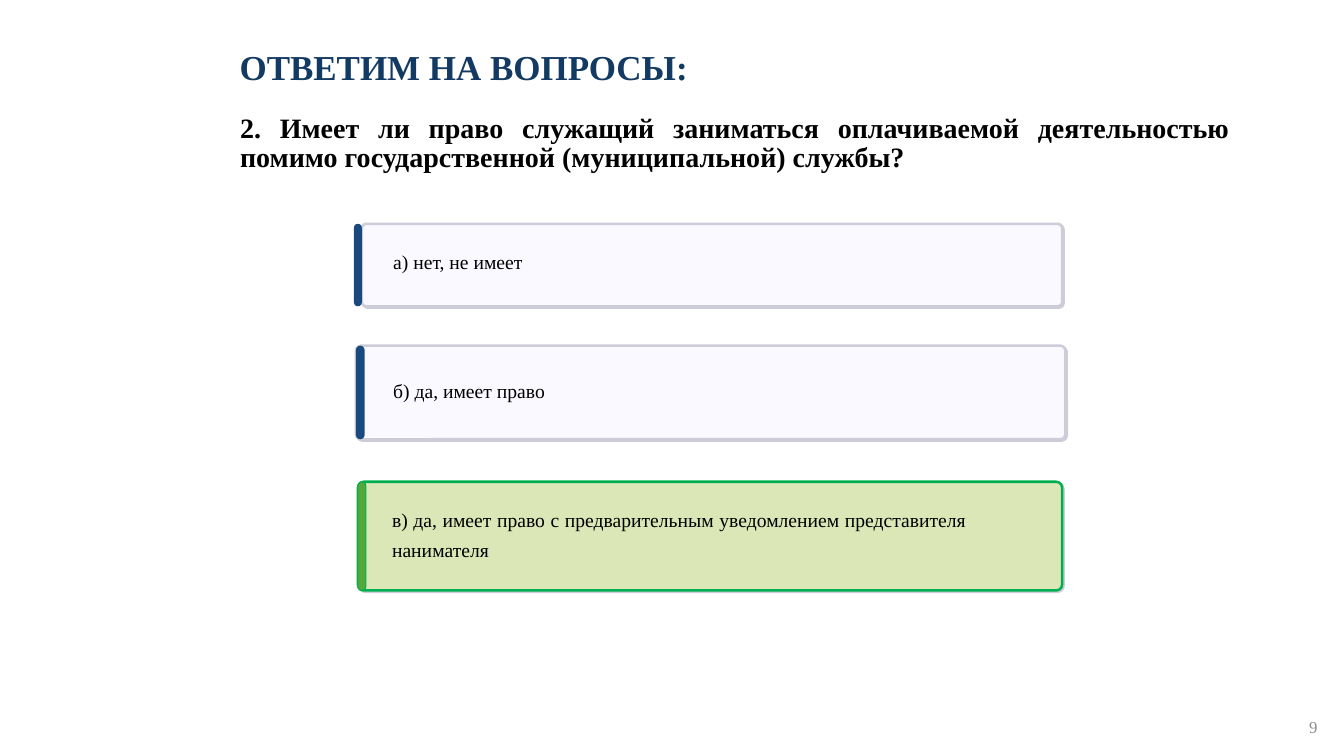
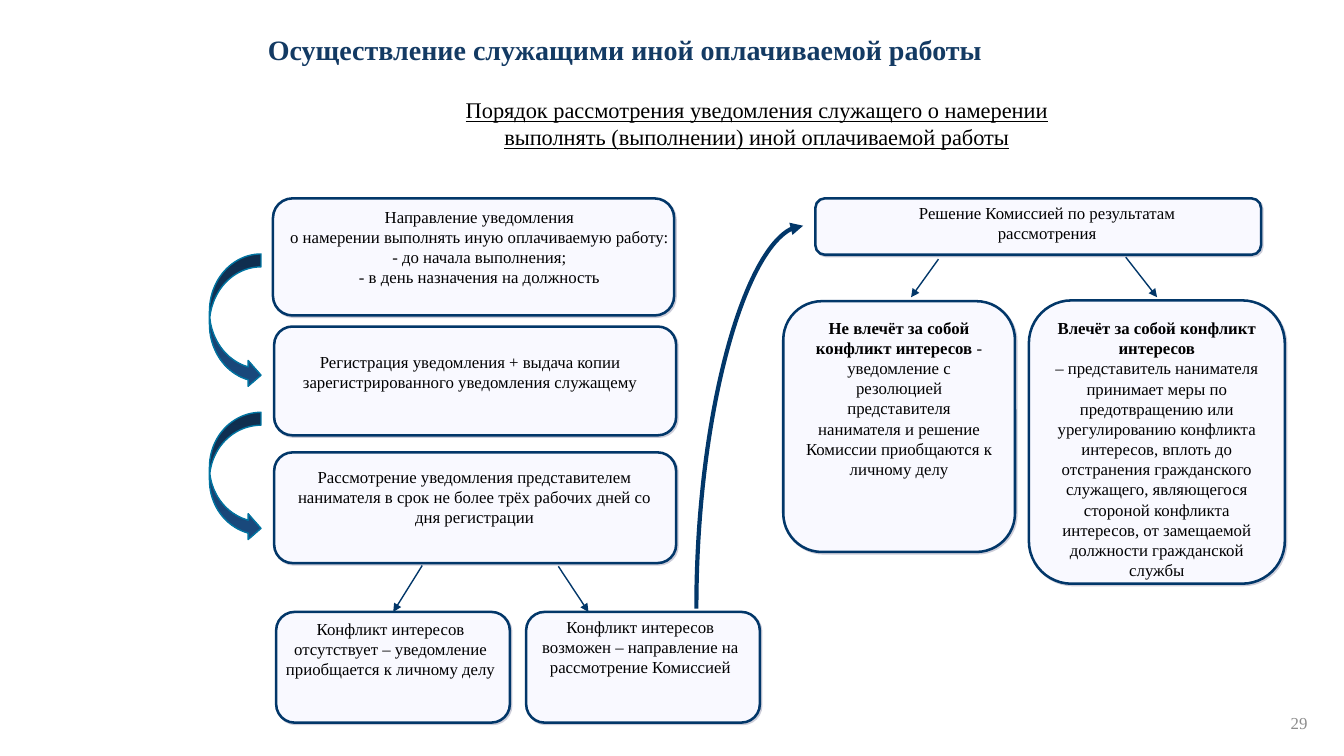
from lxml.etree import SubElement
from pptx import Presentation
from pptx.dml.color import RGBColor
from pptx.enum.shapes import MSO_CONNECTOR as Link, MSO_SHAPE as Preset
from pptx.enum.text import MSO_ANCHOR as Anchor, PP_ALIGN as Align, MSO_UNDERLINE as Underline
from pptx.oxml.ns import qn
from pptx.util import Cm, Pt

FONT = "Times New Roman"
BLACK = RGBColor(0x00, 0x00, 0x00)
TITLE_BLUE = RGBColor(0x13, 0x3A, 0x63)
BAR_BLUE = RGBColor(0x1A, 0x49, 0x7D)
FLOW_BLUE = RGBColor(0x02, 0x37, 0x69)
ARROW_EDGE = RGBColor(0x00, 0x74, 0xA1)
PALE = RGBColor(0xF9, 0xF9, 0xFF)
LILAC = RGBColor(0xCD, 0xCD, 0xD9)
PAGE_GREY = RGBColor(0x8C, 0x8C, 0x8C)
RIGHT_FILL = RGBColor(0xDB, 0xE7, 0xB6)
RIGHT_EDGE = RGBColor(0x00, 0xB0, 0x50)
RIGHT_BAR = RGBColor(0x55, 0xA8, 0x39)


def write(frame, paragraphs, size=12, color=BLACK, bold=False, underline=False,
          align=Align.CENTER, anchor=Anchor.TOP, spacing=None, inset=None):
    frame.word_wrap = True
    frame.vertical_anchor = anchor
    if inset is not None:
        frame.margin_left = frame.margin_right = inset
        frame.margin_top = frame.margin_bottom = inset
    if isinstance(paragraphs, str):
        paragraphs = [paragraphs]
    for index, content in enumerate(paragraphs):
        paragraph = frame.add_paragraph() if index else frame.paragraphs[0]
        paragraph.alignment = align
        paragraph.line_spacing = spacing
        runs = [(content, bold)] if isinstance(content, str) else content
        for text, run_bold in runs:
            run = paragraph.add_run()
            run.text = text
            run.font.name = FONT
            run.font.size = Pt(size)
            run.font.bold = run_bold
            run.font.color.rgb = color
            if underline:
                run.font.underline = Underline.SINGLE_LINE


class Deck:
    def __init__(self):
        self.show = Presentation()
        self.show.slide_width = Cm(33.87)
        self.show.slide_height = Cm(19.05)
        self.slide = None

    def open_slide(self, title, title_place, size, number, number_place):
        self.slide = self.show.slides.add_slide(self.show.slide_layouts[6])
        self.label(title_place, title, size=size, color=TITLE_BLUE, bold=True,
                   align=Align.LEFT, anchor=Anchor.MIDDLE, spacing=0.9)
        self.label((*number_place, 7.62, 1.02), number, color=PAGE_GREY,
                   align=Align.RIGHT, anchor=Anchor.MIDDLE)

    def label(self, place, paragraphs, **style):
        box = self.slide.shapes.add_textbox(*map(Cm, place))
        write(box.text_frame, paragraphs, **style)

    def shape(self, preset, place, fill, edge=None, width=1.8, shadow=False):
        shape = self.slide.shapes.add_shape(preset, *map(Cm, place))
        shape.shadow.inherit = False
        shape.fill.solid()
        shape.fill.fore_color.rgb = fill
        if edge is None:
            shape.line.fill.background()
        else:
            shape.line.color.rgb = edge
            shape.line.width = Pt(width)
        if shadow:
            effects = shape._element.spPr.find(qn("a:effectLst"))
            cast = SubElement(effects, qn("a:outerShdw"), blurRad="0",
                              dist=str(Pt(1.4)), dir="2700000",
                              algn="tl", rotWithShape="0")
            SubElement(cast, qn("a:srgbClr"), val=str(LILAC))
        return shape

    def card(self, place, fill=PALE, edge=FLOW_BLUE):
        return self.shape(Preset.ROUNDED_RECTANGLE, place, fill, edge, shadow=True)

    def answer(self, text, card_place, bar_place, text_place, correct=False):
        card = self.card(card_place, *((RIGHT_FILL, RIGHT_EDGE) if correct else (PALE, LILAC)))
        card.adjustments[0] = 0.056
        bar = self.shape(Preset.ROUNDED_RECTANGLE, bar_place,
                         RIGHT_BAR if correct else BAR_BLUE,
                         RIGHT_EDGE if correct else None, width=0.75)
        bar.adjustments[0] = 0.5
        self.prose(text_place, text, size=14)

    def prose(self, place, text, **style):
        self.label(place, text, align=Align.JUSTIFY, spacing=Pt(20.8), inset=0, **style)

    def step(self, place, text_place, paragraphs):
        self.card(place)
        self.label(text_place, paragraphs)

    def outcome(self, place, paragraphs):
        write(self.card(place).text_frame, paragraphs)

    def arrow(self, ends, width=1, kind=Link.STRAIGHT):
        arrow = self.slide.shapes.add_connector(kind, *map(Cm, ends))
        arrow.line.color.rgb = FLOW_BLUE
        arrow.line.width = Pt(width)
        properties = arrow._element.spPr
        SubElement(properties.find(qn("a:ln")), qn("a:tailEnd"), type="triangle")
        SubElement(properties, qn("a:effectLst"))
        return arrow

    def rising_arrow(self, ends):
        properties = self.arrow(ends, width=3, kind=Link.CURVE)._element.spPr
        properties.find(qn("a:xfrm")).set("rot", "5400000")
        properties.find(qn("a:prstGeom")).set("prst", "curvedConnector2")

    def return_arrow(self, place):
        arrow = self.shape(Preset.CURVED_LEFT_ARROW, place, BAR_BLUE, ARROW_EDGE, 1)
        arrow._element.spPr.find(qn("a:xfrm")).set("flipH", "1")
        arrow.fill.gradient()
        arrow.fill.gradient_angle = 270
        for stop, color in zip(arrow.fill.gradient_stops, (TITLE_BLUE, BAR_BLUE)):
            stop.color.rgb = color


def build_question(deck):
    deck.open_slide("ОТВЕТИМ НА ВОПРОСЫ:", (5.79, 0.48, 26.11, 2.51), 25,
                    "9", (25.83, 17.81))
    deck.prose((6.05, 2.9, 24.94, 3.63),
               "2. Имеет ли право служащий заниматься оплачиваемой деятельностью "
               "помимо государственной (муниципальной) службы?", size=20, bold=True)
    deck.answer("а) нет, не имеет", (9.12, 5.64, 17.65, 2.08),
                (8.92, 5.64, 0.2, 2.08), (9.91, 6.15, 18.34, 1.09))
    deck.answer("б) да, имеет право", (8.97, 8.71, 17.88, 2.36),
                (8.97, 8.71, 0.22, 2.36), (9.91, 9.4, 16.87, 1.19))
    deck.answer("в) да, имеет право с предварительным уведомлением представителя нанимателя",
                (9.02, 12.14, 17.75, 2.74), (9.02, 12.14, 0.2, 2.74),
                (9.88, 12.67, 14.48, 1.55), correct=True)


def build_procedure(deck):
    deck.open_slide("Осуществление служащими иной оплачиваемой работы",
                    (6.5, 0.58, 27.05, 1.45), 20, "29", (25.58, 17.7))
    deck.label((11.1, 2.31, 15.95, 1.63),
               "Порядок рассмотрения уведомления служащего о намерении "
               "выполнять (выполнении) иной оплачиваемой работы", size=16, underline=True)

    steps = [
        ((6.88, 5, 10.11, 2.95), (6.05, 5.08, 12.07, 2.31),
         ["Направление уведомления",
          "о намерении выполнять иную оплачиваемую работу:",
          "- до начала выполнения;",
          "- в день назначения на должность"]),
        ((6.91, 8.23, 10.13, 2.74), (6.68, 8.74, 10.34, 1.27),
         "Регистрация уведомления + выдача копии зарегистрированного уведомления служащему"),
        ((6.91, 11.4, 10.13, 2.79), (7.21, 11.63, 9.5, 1.8),
         "Рассмотрение уведомления представителем нанимателя в срок "
         "не более трёх рабочих дней со дня регистрации"),
        ((6.96, 15.42, 5.89, 2.79), (6.71, 15.47, 6.27, 1.8),
         "Конфликт интересов отсутствует – уведомление приобщается к личному делу"),
        ((13.26, 15.42, 5.89, 2.79), (13.23, 15.42, 5.82, 1.8),
         "Конфликт интересов возможен – направление на рассмотрение Комиссией"),
        ((20.55, 5, 11.23, 1.42), (21.64, 4.98, 9.5, 1.27),
         "Решение Комиссией по результатам рассмотрения"),
    ]
    for step in steps:
        deck.step(*step)

    deck.outcome((19.74, 7.59, 5.84, 6.32), [[
        ("Не влечёт за собой конфликт интересов ", True),
        ("- уведомление с резолюцией представителя нанимателя и решение "
         "Комиссии приобщаются к личному делу", False)]])
    deck.outcome((25.93, 7.57, 6.45, 7.14), [
        [("Влечёт за собой конфликт интересов", True)],
        "– представитель нанимателя принимает меры по предотвращению или "
        "урегулированию конфликта интересов, вплоть до отстранения гражданского "
        "служащего, являющегося стороной конфликта интересов, от замещаемой "
        "должности гражданской службы"])

    for ends in [(10.64, 14.25, 9.91, 15.42), (14.07, 14.27, 14.83, 15.42),
                 (23.65, 6.53, 22.96, 7.49), (28.37, 6.48, 29.16, 7.49)]:
        deck.arrow(ends)
    deck.rising_arrow((23.72, 11.86, 14.07, 9.17))
    for top, height in [(6.4, 3.38), (10.39, 3.25)]:
        deck.return_arrow((5.28, top, 1.3, height))


def main():
    deck = Deck()
    build_question(deck)
    build_procedure(deck)
    deck.show.save("out.pptx")


if __name__ == "__main__":
    main()
